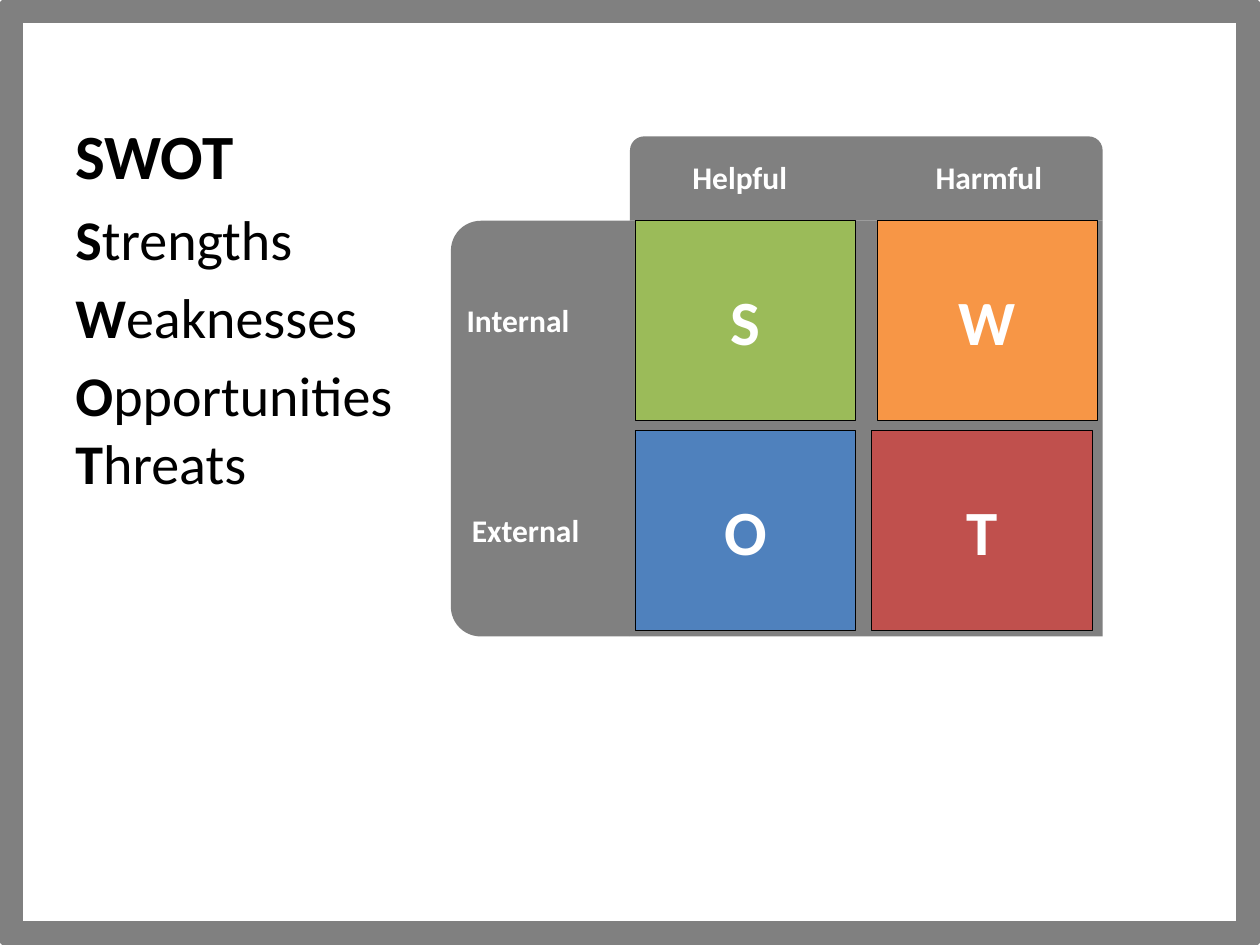
from typing import NamedTuple

from pptx import Presentation
from pptx.dml.color import RGBColor
from pptx.enum.shapes import MSO_SHAPE
from pptx.enum.text import MSO_ANCHOR, PP_ALIGN
from pptx.util import Cm, Pt

RECTANGLE = MSO_SHAPE.RECTANGLE
TAB = MSO_SHAPE.ROUND_2_SAME_RECTANGLE
TOP, MIDDLE, BOTTOM = MSO_ANCHOR.TOP, MSO_ANCHOR.MIDDLE, MSO_ANCHOR.BOTTOM
LEFT, CENTER = PP_ALIGN.LEFT, PP_ALIGN.CENTER

FONT = "Calibri"
BLACK = RGBColor(0x00, 0x00, 0x00)
WHITE = RGBColor(0xFF, 0xFF, 0xFF)
GREY = RGBColor(0x80, 0x80, 0x80)
GREEN = RGBColor(0x9B, 0xBB, 0x59)
ORANGE = RGBColor(0xF7, 0x96, 0x46)
BLUE = RGBColor(0x4F, 0x81, 0xBD)
RED = RGBColor(0xC0, 0x50, 0x4D)


class Area(NamedTuple):
    """Left, top, width and height in centimetres."""
    left: float
    top: float
    width: float
    height: float

    def lengths(self):
        return [Cm(value) for value in self]


class Quadrant(NamedTuple):
    letter: str
    left: float
    top: float
    color: RGBColor


class Label(NamedTuple):
    text: str
    left: float
    top: float


# Matrix measures in centimetres
MATRIX = Area(12.7, 4.45, 9.53, 8.38)
HEADER_HEIGHT, SIDE_WIDTH = 1.7, 3.61
CELL_WIDTH, CELL_HEIGHT = 4.45, 4.02
LABEL_WIDTH, LABEL_HEIGHT = 4.37, 1.02
LOWER_ROW = MATRIX.top + 4.23

QUADRANTS = [
    Quadrant("S", 12.8, MATRIX.top, GREEN),
    Quadrant("W", 17.68, MATRIX.top, ORANGE),
    Quadrant("O", 12.8, LOWER_ROW, BLUE),
    Quadrant("T", 17.57, LOWER_ROW, RED),
]
LABELS = [
    Label("Helpful ", 12.8, 3.07),
    Label("Harmful", 17.75, 3.07),
    Label("Internal ", 8.33, 5.95),
    Label("External", 8.41, 10.18),
]


def add_span(para, text: str, *, size: float, color: RGBColor = BLACK, bold: bool = True) -> None:
    span = para.add_run()
    span.text = text
    span.font.name = FONT
    span.font.size = Pt(size)
    span.font.bold = bold
    span.font.color.rgb = color


def write_text(box, text: str, *, size: float, color: RGBColor = WHITE,
               align: PP_ALIGN = CENTER, anchor: MSO_ANCHOR = MIDDLE) -> None:
    box.text_frame.word_wrap = True
    box.text_frame.vertical_anchor = anchor
    para = box.text_frame.paragraphs[0]
    para.alignment = align
    add_span(para, text, size=size, color=color)


def add_block(page, kind: MSO_SHAPE, area: Area, fill: RGBColor, *,
              line: RGBColor | None = None, weight: float = 0.25):
    block = page.shapes.add_shape(kind, *area.lengths())
    block.shadow.inherit = False
    block.fill.solid()
    block.fill.fore_color.rgb = fill
    if line is None:
        block.line.fill.background()
    else:
        block.line.color.rgb = line
        block.line.width = Pt(weight)
    return block


def add_words(page, area: Area, lines: list[list[str]]) -> None:
    """Write words with a bold initial; each inner list is one paragraph."""
    frame = page.shapes.add_textbox(*area.lengths()).text_frame
    frame.word_wrap = True
    for index, words in enumerate(lines):
        para = frame.add_paragraph() if index else frame.paragraphs[0]
        if index:
            para.space_before = Pt(6.4)
        for position, word in enumerate(words):
            if position:
                para.add_line_break()
            add_span(para, word[0], size=32)
            add_span(para, word[1:], size=32, bold=False)


def add_matrix(page) -> None:
    # Header tab, and side tab turned so its round corners face left
    add_block(page, TAB, Area(MATRIX.left, MATRIX.top - HEADER_HEIGHT,
                              MATRIX.width, HEADER_HEIGHT), GREY)
    side_left = MATRIX.left - (SIDE_WIDTH + MATRIX.height) / 2
    side_top = MATRIX.top + (MATRIX.height - SIDE_WIDTH) / 2
    side = add_block(page, TAB, Area(side_left, side_top, MATRIX.height, SIDE_WIDTH), GREY)
    side.rotation = 270

    for quadrant in QUADRANTS:
        area = Area(quadrant.left, quadrant.top, CELL_WIDTH, CELL_HEIGHT)
        cell = add_block(page, RECTANGLE, area, quadrant.color, line=BLACK)
        write_text(cell, quadrant.letter, size=36)

    for label in LABELS:
        area = Area(label.left, label.top, LABEL_WIDTH, LABEL_HEIGHT)
        box = page.shapes.add_textbox(*area.lengths())
        write_text(box, label.text, size=18, anchor=TOP)


def main() -> None:
    deck = Presentation()
    deck.slide_width, deck.slide_height = Cm(25.4), Cm(19.05)
    page = deck.slides.add_slide(deck.slide_layouts[6])

    # Page frame and matrix ground
    add_block(page, RECTANGLE, Area(0.21, 0.21, 24.98, 18.63), WHITE, line=GREY, weight=15)
    add_block(page, RECTANGLE, MATRIX, GREY)

    # Title and word list
    title = page.shapes.add_textbox(*Area(1.27, 0.76, 8.36, 3.23).lengths())
    write_text(title, "SWOT", size=36, color=BLACK, align=LEFT, anchor=BOTTOM)
    add_words(page, Area(1.27, 3.99, 8.36, 13.03),
              [["Strengths"], ["Weaknesses"], ["Opportunities ", "Threats"]])

    add_matrix(page)
    deck.save("out.pptx")


if __name__ == "__main__":
    main()
